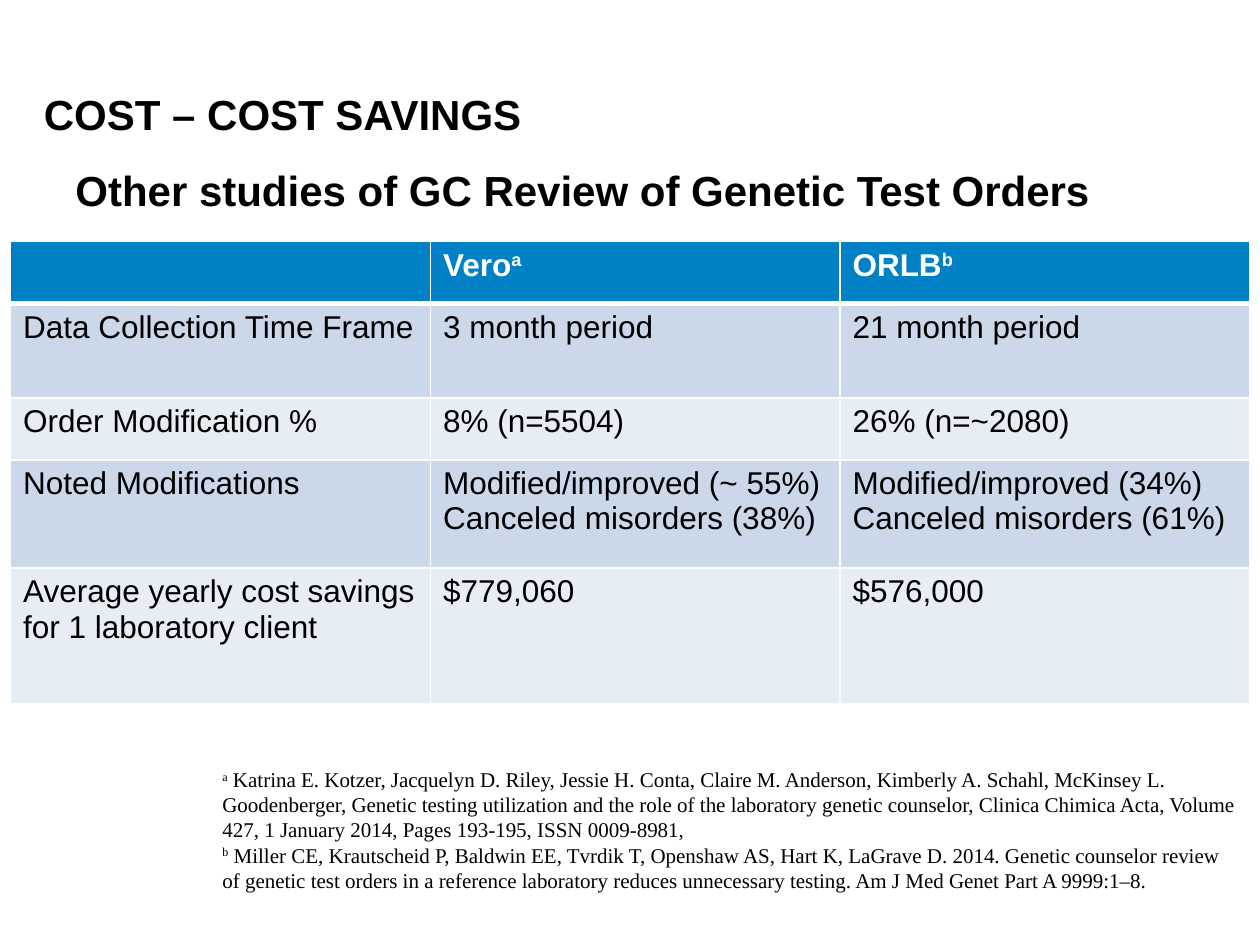
from lxml.etree import SubElement
from pptx import Presentation
from pptx.dml.color import RGBColor
from pptx.enum.text import MSO_ANCHOR
from pptx.oxml.ns import qn
from pptx.util import Pt

COLORS = {"text": "000000", "paper": "FFFFFF", "header": "0081C6",
          "band_dark": "CBD8EA", "band_light": "E7EDF5"}
GRID_COLUMNS, GRID_ROWS = 120, 90
UNIT = Pt(6)  # one grid step, a twelfth of an inch


def steps(count):
    return round(count * UNIT)


class SlideBuilder:
    heading_font, note_font = "Arial", "Times New Roman"

    def __init__(self, slide):
        self.slide = slide

    def set_text(self, frame, lines, font, size, color="text", bold=False, spacing=None):
        """Fill a text frame; parts between carets are superscript."""
        frame.word_wrap = True
        for index, line in enumerate(lines):
            paragraph = frame.paragraphs[0] if index == 0 else frame.add_paragraph()
            if spacing:
                paragraph.line_spacing = spacing
            paragraph.font.name = font
            paragraph.font.size = Pt(size)
            paragraph.font.bold = bold
            paragraph.font.color.rgb = RGBColor.from_string(COLORS[color])
            for part_index, part in enumerate(line.split("^")):
                if part:
                    run = paragraph.add_run()
                    run.text = part
                    if part_index % 2:
                        run._r.get_or_add_rPr().set("baseline", "30000")

    def text_box(self, left, top, width, height):
        box = self.slide.shapes.add_textbox(*map(steps, (left, top, width, height)))
        return box.text_frame

    def heading(self, text, left, top):
        frame = self.text_box(left, top, 111, 9)
        frame.vertical_anchor = MSO_ANCHOR.MIDDLE
        self.set_text(frame, [text], self.heading_font, 24, bold=True, spacing=0.8)

    def notes(self, lines, left, top, width, height):
        self.set_text(self.text_box(left, top, width, height), lines, self.note_font, 12)

    def borders(self, cell, widths):
        properties = cell._tc.get_or_add_tcPr()
        for side, width in widths.items():
            line = SubElement(properties, qn(f"a:ln{side}"), w=str(int(Pt(width))))
            fill = SubElement(line, qn("a:solidFill"))
            SubElement(fill, qn("a:srgbClr"), val=COLORS["paper"])

    def table(self, rows, left, top, widths, heights):
        table = self.slide.shapes.add_table(
            len(rows), len(widths), steps(left), steps(top),
            steps(sum(widths)), steps(sum(heights))).table
        for column, width in zip(table.columns, widths):
            column.width = steps(width)
        for index, (row, height) in enumerate(zip(rows, heights)):
            table.rows[index].height = steps(height)
            is_header = index == 0
            band = "header" if is_header else "band_dark" if index % 2 else "band_light"
            for column, text in enumerate(row):
                cell = table.cell(index, column)
                # A thicker rule separates the header from the body
                self.borders(cell, {"L": 1, "R": 1, "T": 3 if index == 1 else 1,
                                    "B": 3 if is_header else 1})
                cell.fill.solid()
                cell.fill.fore_color.rgb = RGBColor.from_string(COLORS[band])
                self.set_text(cell.text_frame, text.split("\n"), self.heading_font, 18,
                              "paper" if is_header else "text", is_header)


STUDIES = [
    ("", "Vero^a^", "ORLB^b^"),
    ("Data Collection Time Frame", "3 month period", "21 month period"),
    ("Order Modification %", "8% (n=5504)", "26% (n=~2080)"),
    ("Noted Modifications",
     "Modified/improved (~ 55%)\nCanceled misorders (38%)",
     "Modified/improved (34%)\nCanceled misorders (61%)"),
    ("Average yearly cost savings for 1 laboratory client", "$779,060", "$576,000"),
]
REFERENCES = [
    "^a^ Katrina E. Kotzer, Jacquelyn D. Riley, Jessie H. Conta, Claire M. Anderson, "
    "Kimberly A. Schahl, McKinsey L. Goodenberger, Genetic testing utilization and the "
    "role of the laboratory genetic counselor, Clinica Chimica Acta, Volume 427, "
    "1 January 2014, Pages 193-195, ISSN 0009-8981,",
    "^b^ Miller CE, Krautscheid P, Baldwin EE, Tvrdik T, Openshaw AS, Hart K, LaGrave D. "
    "2014. Genetic counselor review of genetic test orders in a reference laboratory "
    "reduces unnecessary testing. Am J Med Genet Part A 9999:1–8.",
]


def main():
    deck = Presentation()
    deck.slide_width, deck.slide_height = steps(GRID_COLUMNS), steps(GRID_ROWS)
    builder = SlideBuilder(deck.slides.add_slide(deck.slide_layouts[6]))

    # Headings
    builder.heading("Other studies of GC Review of Genetic Test Orders", 6, 14)
    builder.heading("COST – COST SAVINGS", 3, 6.75)

    # Comparison of the two studies
    builder.table(STUDIES, 1, 23, widths=(40, 39, 39), heights=(5.9, 9, 5.9, 10.3, 12.9))

    # References
    builder.notes(REFERENCES, 20, 72.4, 99, 17.6)

    deck.save("out.pptx")


if __name__ == "__main__":
    main()
